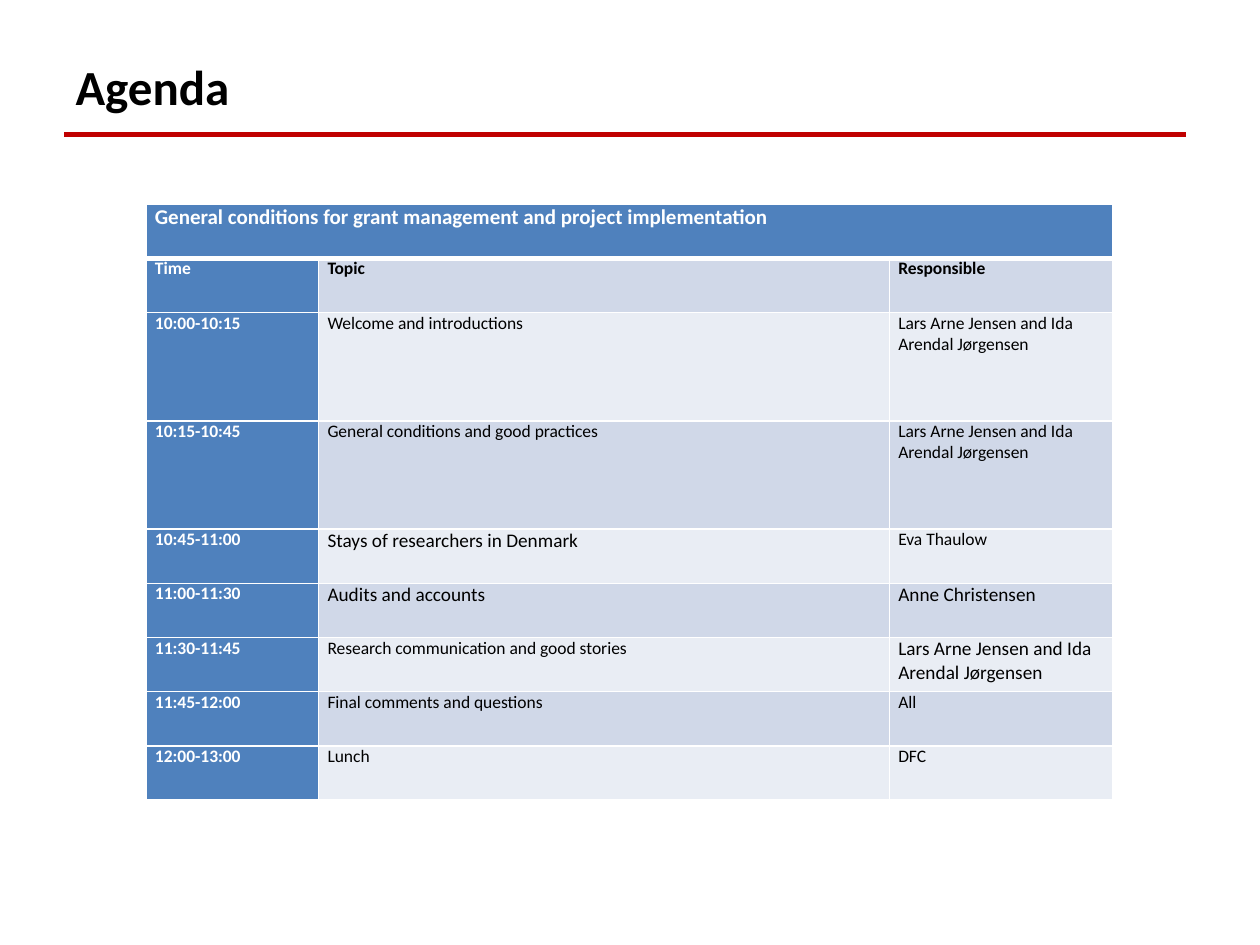
"""Build the agenda slide with a ruled title and a timetable."""
from lxml.etree import SubElement
from pptx import Presentation
from pptx.dml.color import RGBColor
from pptx.enum.shapes import MSO_CONNECTOR
from pptx.enum.text import MSO_ANCHOR, PP_ALIGN
from pptx.oxml.ns import qn
from pptx.util import Inches, Pt

COLORS = {
    "text": "000000",
    "light": "FFFFFF",
    "rule": "C00000",
    "accent": "4F81BD",
    "dark_band": "D0D8E8",
    "light_band": "E9EDF4",
}
HOSTS = "Lars Arne Jensen and Ida Arendal Jørgensen"
AGENDA = [
    ("General conditions for grant management and project implementation", "", ""),
    ("Time", "Topic", "Responsible"),
    ("10:00-10:15", "Welcome and introductions", HOSTS),
    ("10:15-10:45", "General conditions and good practices", HOSTS),
    ("10:45-11:00", "Stays of researchers in Denmark", "Eva Thaulow"),
    ("11:00-11:30", "Audits and accounts", "Anne Christensen"),
    ("11:30-11:45", "Research communication and good stories", HOSTS),
    ("11:45-12:00", "Final comments and questions", "All"),
    ("12:00-13:00", "Lunch", "DFC"),
]
COLUMN_WIDTHS = [1.37, 4.53, 1.77]
ROW_HEIGHT = 0.43
TALL_ROWS = {2, 3}
LARGER_CELLS = {(4, 1), (5, 1), (5, 2), (6, 2)}


def format_font(font, size, color, bold):
    for name, value in {"name": "Calibri", "size": Pt(size), "bold": bold}.items():
        setattr(font, name, value)
    font.color.rgb = RGBColor.from_string(COLORS[color])


def add_border(cell, side, width):
    border = SubElement(cell._tc.get_or_add_tcPr(), qn(f"a:ln{side}"), w=str(Pt(width)))
    fill = SubElement(border, qn("a:solidFill"))
    SubElement(fill, qn("a:srgbClr"), val=COLORS["light"])


prs = Presentation()
prs.slide_width, prs.slide_height = Inches(10), Inches(7.5)
slide = prs.slides.add_slide(prs.slide_layouts[5])

rule = slide.shapes.add_connector(
    MSO_CONNECTOR.STRAIGHT, Inches(0.51), Inches(1.07), Inches(9.41), Inches(1.07)
)
rule.line.color.rgb = RGBColor.from_string(COLORS["rule"])
rule.line.width = Pt(3)
SubElement(rule._element.spPr, qn("a:effectLst"))

title = slide.shapes.title
title_place = {"left": 0.5, "top": 0.3, "width": 9, "height": 0.77}
for name, value in title_place.items():
    setattr(title, name, Inches(value))
title.text_frame.text = "Agenda"
title.text_frame.vertical_anchor = MSO_ANCHOR.MIDDLE
heading = title.text_frame.paragraphs[0]
heading.alignment = PP_ALIGN.LEFT
format_font(heading.runs[0].font, 28, "text", True)

row_heights = [ROW_HEIGHT * (2 if row in TALL_ROWS else 1) for row in range(len(AGENDA))]
timetable = slide.shapes.add_table(
    len(AGENDA), len(COLUMN_WIDTHS), Inches(1.16), Inches(1.62),
    Inches(sum(COLUMN_WIDTHS)), Inches(sum(row_heights)),
).table
for column, width in zip(timetable.columns, COLUMN_WIDTHS):
    column.width = Inches(width)
for row, height in zip(timetable.rows, row_heights):
    row.height = Inches(height)
timetable.cell(0, 0).merge(timetable.cell(0, 2))

margins = {"margin_left": 0.07, "margin_right": 0.07, "margin_top": 0, "margin_bottom": 0}
for row, entries in enumerate(AGENDA):
    for col, entry in enumerate(entries):
        cell = timetable.cell(row, col)
        for name, value in margins.items():
            setattr(cell, name, Inches(value))
        borders = {"L": 1, "R": 1, "T": 3 if row == 1 else 1, "B": 3 if row == 0 else 1}
        for side, width in borders.items():
            add_border(cell, side, width)
        is_accent = row == 0 or col == 0
        band = "dark_band" if row % 2 else "light_band"
        cell.fill.solid()
        cell.fill.fore_color.rgb = RGBColor.from_string(
            COLORS["accent" if is_accent else band]
        )
        if entry:
            cell.text = entry
            size = 12 if row == 0 else 11 if (row, col) in LARGER_CELLS else 10
            run = cell.text_frame.paragraphs[0].runs[0]
            format_font(run.font, size, "light" if is_accent else "text", is_accent or row == 1)

prs.save("out.pptx")
